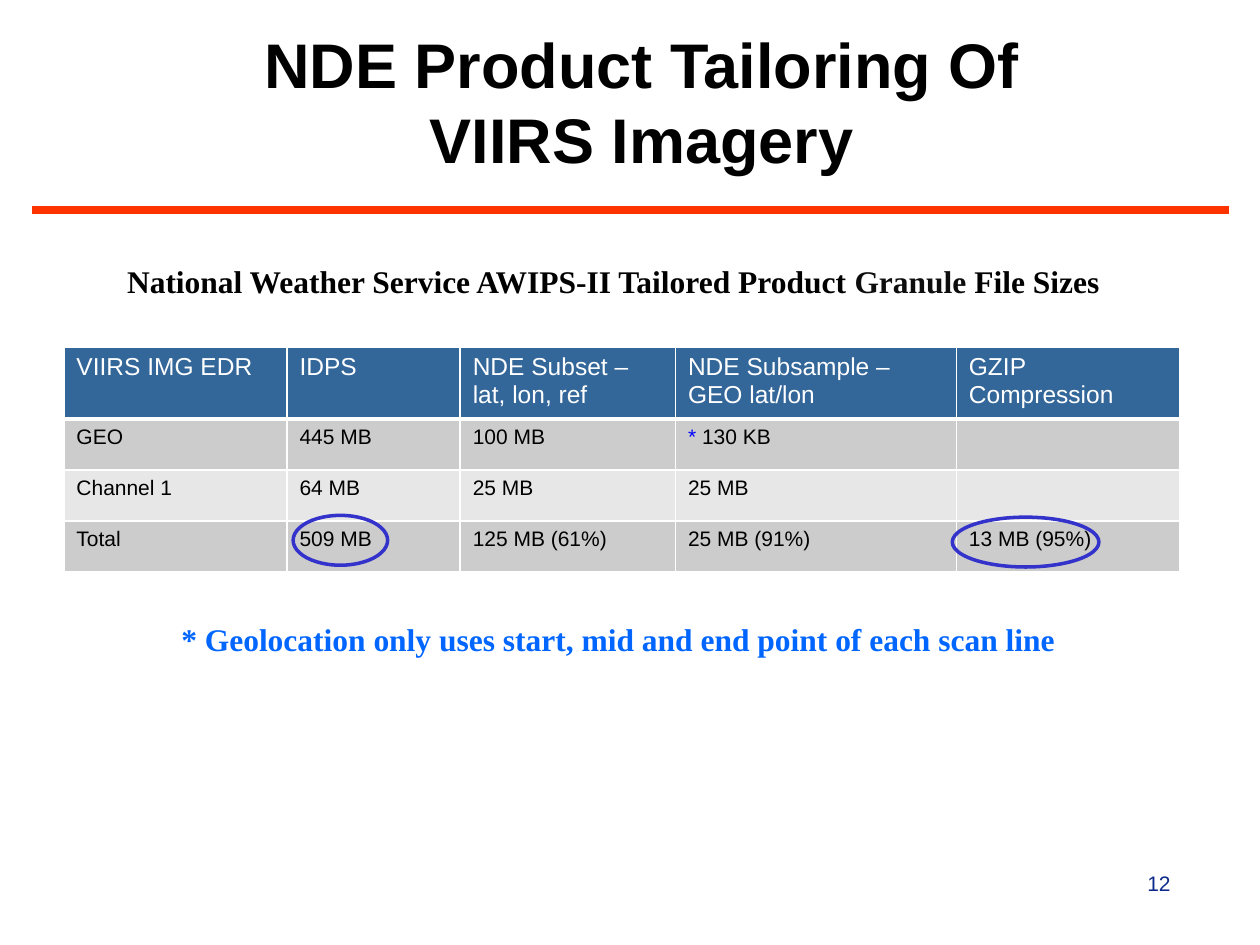
from dataclasses import dataclass

from lxml import etree
from pptx import Presentation
from pptx import util as u
from pptx.dml.color import RGBColor
from pptx.enum import shapes, text
from pptx.oxml import ns

COLORS = {
    "black": "000000",
    "near_black": "0D0D0D",
    "white": "FFFFFF",
    "rule": "FF3300",
    "header": "336699",
    "band_dark": "CCCCCC",
    "band_light": "E7E7E7",
    "asterisk": "0000FF",
    "footnote": "0066FF",
    "page": "0C2A8C",
    "ring": "3333CC",
}
SANS, SERIF = "Arial", "Times New Roman"


@dataclass
class Box:
    left: float
    top: float
    width: float
    height: float

    def lengths(self) -> list:
        return [u.Pt(n) for n in (self.left, self.top, self.width, self.height)]


@dataclass
class Run:
    words: str
    color: str = "black"


def rgb(name: str) -> RGBColor:
    return RGBColor.from_string(COLORS[name])


def write(frame, runs: list[Run], *, size: float, font: str = SANS, bold: bool = False,
          align=text.PP_ALIGN.LEFT) -> None:
    paragraph = frame.paragraphs[0]
    paragraph.alignment = align
    for piece in runs:
        run = paragraph.add_run()
        run.text = piece.words
        run.font.size = u.Pt(size)
        run.font.name = font
        run.font.bold = bold
        run.font.color.rgb = rgb(piece.color)


def add_text(slide, box: Box, runs: list[Run], *, wrap: bool = True,
             anchor=text.MSO_ANCHOR.TOP, **style) -> None:
    frame = slide.shapes.add_textbox(*box.lengths()).text_frame
    frame.word_wrap = wrap
    frame.vertical_anchor = anchor
    write(frame, runs, **style)


def add_rule(slide, left: float, right: float, y: float) -> None:
    rule = slide.shapes.add_connector(
        shapes.MSO_CONNECTOR.STRAIGHT, u.Pt(left), u.Pt(y), u.Pt(right), u.Pt(y))
    rule.line.color.rgb = rgb("rule")
    rule.line.width = u.Pt(4.5)
    etree.SubElement(rule._element.spPr, ns.qn("a:effectLst"))


def add_ring(slide, box: Box) -> None:
    ring = slide.shapes.add_shape(shapes.MSO_SHAPE.OVAL, *box.lengths())
    ring.shadow.inherit = False
    ring.fill.background()
    ring.line.color.rgb = rgb("ring")
    ring.line.width = u.Pt(2)


def set_borders(cell, bottom: float) -> None:
    """Draw white edges, 1 pt wide except for the given bottom width."""
    properties = cell._tc.get_or_add_tcPr()
    edges = {"lnL": 1, "lnR": 1, "lnT": 1, "lnB": bottom}
    for position, (tag, width) in enumerate(edges.items()):
        edge = etree.Element(ns.qn(f"a:{tag}"), w=str(u.Pt(width)))
        fill = etree.SubElement(edge, ns.qn("a:solidFill"))
        etree.SubElement(fill, ns.qn("a:srgbClr"), val=COLORS["white"])
        properties.insert(position, edge)


def add_size_table(slide, box: Box, widths: list[float], heights: list[float],
                   rows: list[list[str]]) -> None:
    table = slide.shapes.add_table(len(rows), len(widths), *box.lengths()).table
    for column, width in zip(table.columns, widths):
        column.width = u.Pt(width)
    for r, (row, height) in enumerate(zip(rows, heights)):
        table.rows[r].height = u.Pt(height)
        header = r == 0
        band = "header" if header else "band_dark" if r % 2 else "band_light"
        for c, words in enumerate(row):
            cell = table.cell(r, c)
            cell.fill.solid()
            cell.fill.fore_color.rgb = rgb(band)
            set_borders(cell, bottom=3 if header else 1)
            if not words:
                continue
            runs = [Run(words, "white" if header else "black")]
            if words.startswith("* "):
                runs = [Run("* ", "asterisk"), Run(words[2:])]
            write(cell.text_frame, runs, size=14 if header else 12)


def main() -> None:
    deck = Presentation()
    deck.slide_width, deck.slide_height = u.Pt(720), u.Pt(540)
    slide = deck.slides.add_slide(deck.slide_layouts[6])

    add_rule(slide, 18, 702, 120)
    add_text(slide, Box(113.75, 21, 506, 73), [Run("NDE Product Tailoring Of VIIRS Imagery")],
             size=36, bold=True, align=text.PP_ALIGN.CENTER, anchor=text.MSO_ANCHOR.MIDDLE)

    add_size_table(
        slide, Box(36.5, 198.5, 637.5, 128),
        widths=[127.5, 99, 123, 160.5, 127.5],
        heights=[40.5, 29.2, 29.2, 29.2],
        rows=[
            ["VIIRS IMG EDR", "IDPS", "NDE Subset – lat, lon, ref",
             "NDE Subsample – GEO lat/lon", "GZIP Compression"],
            ["GEO", "445 MB", "100 MB", "* 130 KB", ""],
            ["Channel 1", "64 MB", "25 MB", "25 MB", ""],
            ["Total", "509 MB", "125 MB (61%)", "25 MB (91%)", "13 MB (95%)"],
        ])

    add_text(slide, Box(65.5, 146.2, 580.5, 29),
             [Run("National Weather Service AWIPS-II Tailored Product "),
              Run("Granule ", "near_black"), Run("File Sizes")],
             size=18, font=SERIF, bold=True, wrap=False)
    add_text(slide, Box(96.5, 350.6, 519, 29),
             [Run("* Geolocation only uses start, mid and end point of each scan line", "footnote")],
             size=18, font=SERIF, bold=True, wrap=False)
    add_text(slide, Box(586, 494, 90, 36), [Run("12", "page")],
             size=12, align=text.PP_ALIGN.RIGHT)

    for ring in (Box(167.5, 294.5, 54, 28.5), Box(544.2, 295.5, 83.8, 28.5)):
        add_ring(slide, ring)

    deck.save("out.pptx")


if __name__ == "__main__":
    main()
